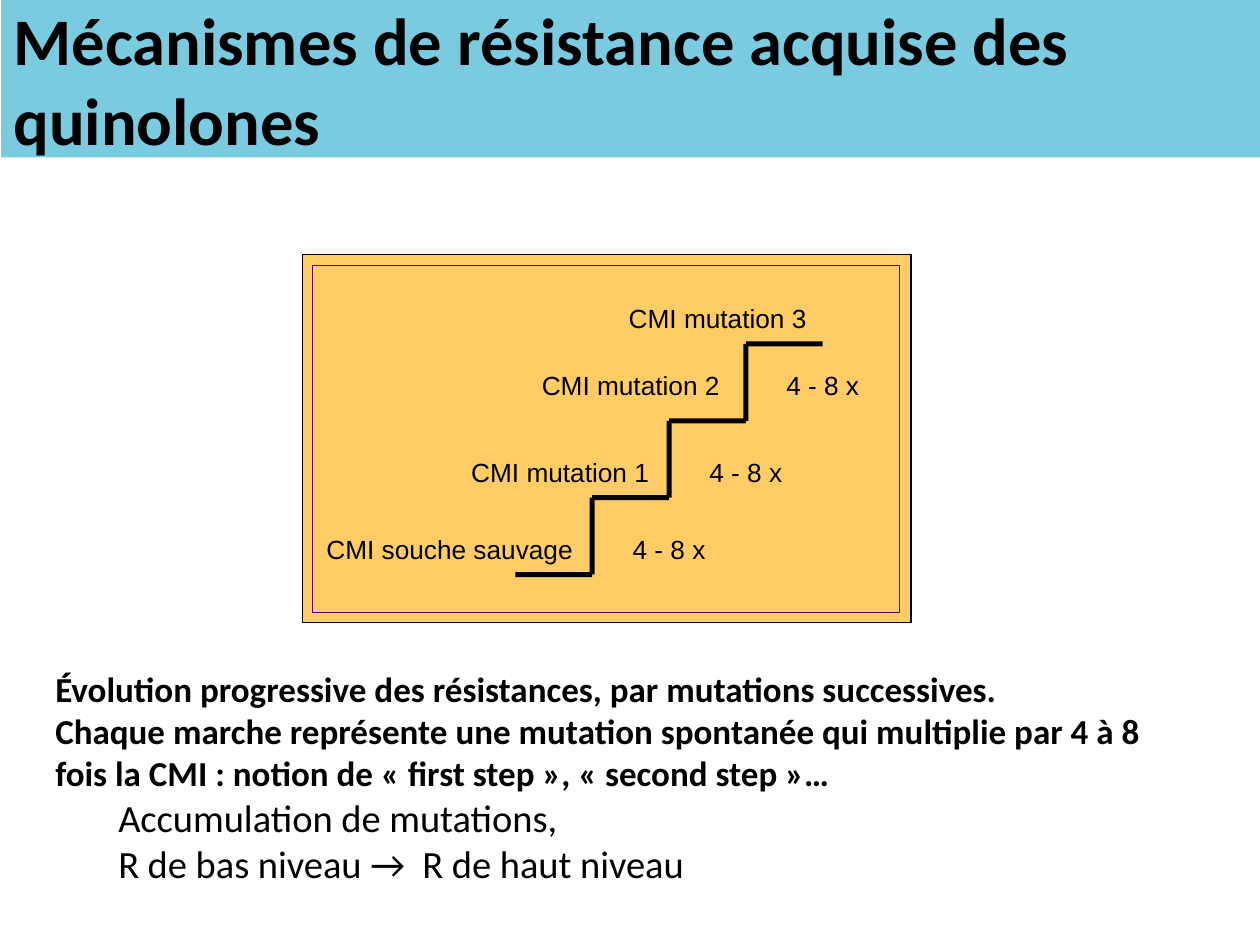
from dataclasses import dataclass
from typing import Optional

from pptx import Presentation
from pptx.dml.color import RGBColor
from pptx.enum.shapes import MSO_SHAPE
from pptx.enum.text import MSO_ANCHOR, MSO_AUTO_SIZE, PP_ALIGN
from pptx.util import Inches, Pt


@dataclass(frozen=True)
class Theme:
    ink: RGBColor = RGBColor(0x00, 0x00, 0x00)
    banner: RGBColor = RGBColor(0x7A, 0xCB, 0xE0)
    panel: RGBColor = RGBColor(0xFF, 0xCC, 0x66)
    frame: RGBColor = RGBColor(0x66, 0x00, 0x66)
    body_font: str = "Calibri"
    label_font: str = "Arial"
    title_size: int = 38
    body_size: int = 20
    sub_size: int = 22
    label_size: int = 15
    border: float = 0.75


@dataclass(frozen=True)
class Box:
    left: float
    top: float
    width: float
    height: float

    def lengths(self) -> list:
        return [Inches(v) for v in (self.left, self.top, self.width, self.height)]


@dataclass(frozen=True)
class Step:
    label: str
    left: float
    top: float
    width: float = 1.43


@dataclass(frozen=True)
class Statement:
    text: str
    is_sub: bool = False


THEME = Theme()
STEPS = [
    Step("CMI souche sauvage", 2.59, 4.23, 1.98),
    Step("CMI mutation 1", 3.74, 3.62),
    Step("CMI mutation 2", 4.3, 2.93),
    Step("CMI mutation 3", 4.99, 2.4),
]
STATEMENTS = [
    Statement("Évolution progressive des résistances, par mutations successives."),
    Statement("Chaque marche représente une mutation spontanée qui multiplie par 4 à 8 "
              "fois la CMI : notion de « first step », « second step »…"),
    Statement("Accumulation de mutations,", is_sub=True),
    Statement("R de bas niveau →  R de haut niveau", is_sub=True),
]
STEP_SIZE = 0.61
STROKE = 0.04
STAIR_LEFT, STAIR_BOTTOM = 4.09, 4.54
FACTOR_LEFT = 5.02


def apply_format(target, values: dict) -> None:
    for attribute, value in values.items():
        setattr(target, attribute, value)


def add_rectangle(shapes, box: Box, fill: Optional[RGBColor] = None,
                  line: Optional[RGBColor] = None):
    rectangle = shapes.add_shape(MSO_SHAPE.RECTANGLE, *box.lengths())
    rectangle.shadow.inherit = False
    if fill is None:
        rectangle.fill.background()
    else:
        rectangle.fill.solid()
        rectangle.fill.fore_color.rgb = fill
    if line is None:
        rectangle.line.fill.background()
    else:
        rectangle.line.color.rgb = line
        rectangle.line.width = Pt(THEME.border)
    return rectangle


def write(paragraph, text: str, font: str, size: int, bold: bool = False) -> None:
    run = paragraph.add_run()
    run.text = text
    apply_format(run.font, {"name": font, "size": Pt(size), "bold": bold})
    run.font.color.rgb = THEME.ink
    paragraph.alignment = PP_ALIGN.LEFT


def add_label(shapes, text: str, box: Box) -> None:
    frame = shapes.add_textbox(*box.lengths()).text_frame
    apply_format(frame, {
        "margin_left": 0, "margin_top": 0, "margin_right": 0, "margin_bottom": 0,
        "word_wrap": False, "auto_size": MSO_AUTO_SIZE.SHAPE_TO_FIT_TEXT,
    })
    write(frame.paragraphs[0], text, THEME.label_font, THEME.label_size)


def add_staircase(shapes) -> None:
    """Draw one tread per step, and a riser with its factor between steps."""
    add_rectangle(shapes, Box(2.4, 2.02, 4.83, 2.92), THEME.panel, THEME.ink)
    for index, step in enumerate(STEPS):
        shift = index * STEP_SIZE
        left, top = STAIR_LEFT + shift, STAIR_BOTTOM - shift
        add_rectangle(shapes, Box(left, top, STEP_SIZE, STROKE), THEME.ink)
        add_label(shapes, step.label, Box(step.left, step.top, step.width, 0.25))
        if index < len(STEPS) - 1:
            riser = Box(left + STEP_SIZE - STROKE / 2, top - STEP_SIZE + STROKE / 2,
                        STROKE, STEP_SIZE)
            add_rectangle(shapes, riser, THEME.ink)
            add_label(shapes, "4 - 8 x", Box(FACTOR_LEFT + shift, step.top, 0.58, 0.25))
    add_rectangle(shapes, Box(2.48, 2.11, 4.66, 2.75), line=THEME.frame)


def add_statements(shapes) -> None:
    frame = shapes.add_textbox(*Box(0.34, 5.25, 9.21, 1.85).lengths()).text_frame
    apply_format(frame, {"word_wrap": True, "auto_size": MSO_AUTO_SIZE.SHAPE_TO_FIT_TEXT})
    for index, statement in enumerate(STATEMENTS):
        paragraph = frame.add_paragraph() if index else frame.paragraphs[0]
        size = THEME.sub_size if statement.is_sub else THEME.body_size
        write(paragraph, statement.text, THEME.body_font, size, not statement.is_sub)
        if statement.is_sub:
            paragraph.level = 1
            properties = paragraph._p.get_or_add_pPr()
            properties.set("marL", str(Inches(0.81)))
            properties.set("indent", str(Inches(-0.31)))


def add_banner(shapes) -> None:
    frame = add_rectangle(shapes, Box(0.01, 0, 9.99, 1.25), THEME.banner).text_frame
    apply_format(frame, {"word_wrap": True, "vertical_anchor": MSO_ANCHOR.MIDDLE})
    write(frame.paragraphs[0], "Mécanismes de résistance acquise des quinolones",
          THEME.body_font, THEME.title_size, True)


def main() -> None:
    presentation = Presentation()
    apply_format(presentation, {"slide_width": Inches(10), "slide_height": Inches(7.5)})
    slide = presentation.slides.add_slide(presentation.slide_layouts[6])
    add_staircase(slide.shapes.add_group_shape().shapes)
    add_statements(slide.shapes)
    add_banner(slide.shapes)
    presentation.save("out.pptx")


if __name__ == "__main__":
    main()
